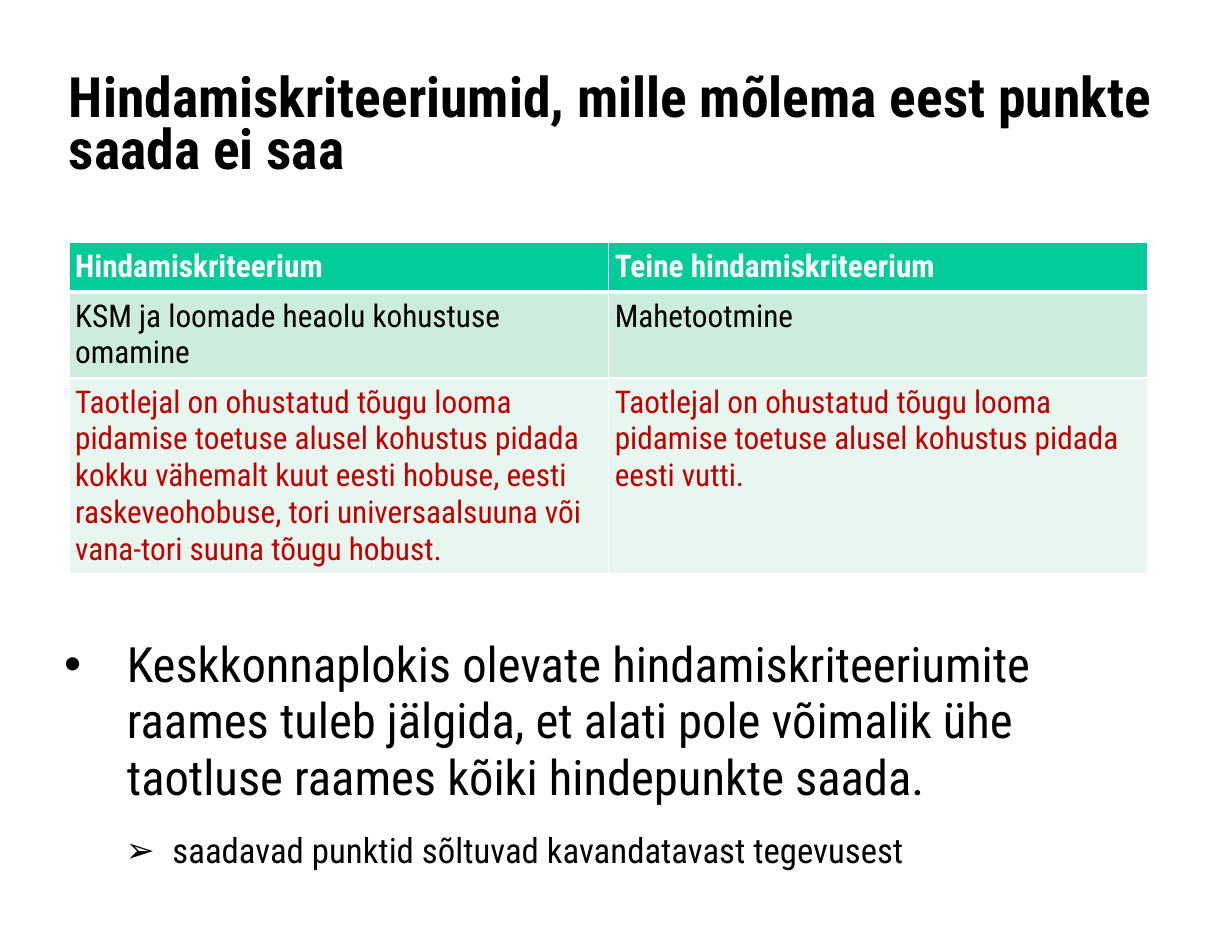
from lxml.etree import SubElement
from pptx import Presentation
from pptx.dml.color import RGBColor
from pptx.enum.text import MSO_ANCHOR, MSO_AUTO_SIZE, PP_ALIGN
from pptx.oxml.ns import qn
from pptx.util import Pt

PX = 9000  # 40 px to the centimetre
FONT = "Roboto Condensed"
BLACK = "000000"


def add_run(p, text, size, color, bold=False):
    r = p.add_run()
    r.text = text
    r.font.name = FONT
    r.font.size = Pt(size)
    r.font.bold = bold
    r.font.color.rgb = RGBColor.from_string(color)


def place(sp, left, top, width, height, anchor):
    """Move a placeholder and reset its text frame."""
    sp.left, sp.top, sp.width, sp.height = (
        v * PX for v in (left, top, width, height))
    tf = sp.text_frame
    tf.word_wrap = True
    tf.auto_size = MSO_AUTO_SIZE.NONE
    tf.vertical_anchor = anchor
    tf.margin_left = tf.margin_top = tf.margin_right = tf.margin_bottom = 0
    return tf


prs = Presentation()
prs.slide_width, prs.slide_height = 1000 * PX, 760 * PX
s = prs.slides.add_slide(prs.slide_layouts[1])

# Title
tf = place(s.shapes.title, 56, 34, 884, 140, MSO_ANCHOR.MIDDLE)
p = tf.paragraphs[0]
p.alignment = PP_ALIGN.LEFT
p.line_spacing = 0.77
add_run(p, "Hindamiskriteeriumid, mille mõlema eest punkte saada ei saa",
        32, BLACK, True)

# Criteria table: row height, fill, text colour, bold, bottom border, cell texts
rows = [
    (40, "00CC99", "FFFFFF", True, 3,
     ["Hindamiskriteerium", "Teine hindamiskriteerium"]),
    (70, "CCECDE", BLACK, False, 1,
     ["KSM ja loomade heaolu kohustuse omamine", "Mahetootmine"]),
    (159, "E7F6EF", "C00000", False, 1,
     ["Taotlejal on ohustatud tõugu looma pidamise toetuse alusel kohustus "
      "pidada kokku vähemalt kuut eesti hobuse, eesti raskeveohobuse, tori "
      "universaalsuuna või vana-tori suuna tõugu hobust.",
      "Taotlejal on ohustatud tõugu looma pidamise toetuse alusel kohustus "
      "pidada eesti vutti."]),
]
table = s.shapes.add_table(
    len(rows), 2, 56 * PX, 197 * PX, 876 * PX, 269 * PX).table
for i, (height, fill, color, bold, bottom, texts) in enumerate(rows):
    table.rows[i].height = height * PX
    top = rows[i - 1][4] if i else 1
    for j, text in enumerate(texts):
        cell = table.cell(i, j)
        cell.margin_left = cell.margin_right = 5 * PX
        cell.margin_top = cell.margin_bottom = 5 * PX
        tcPr = cell._tc.get_or_add_tcPr()
        for side, width in (("L", 1), ("R", 1), ("T", top), ("B", bottom)):
            ln = SubElement(tcPr, qn(f"a:ln{side}"), w=str(Pt(width)))
            SubElement(SubElement(ln, qn("a:solidFill")),
                       qn("a:srgbClr"), val="FFFFFF")
        cell.fill.solid()
        cell.fill.fore_color.rgb = RGBColor.from_string(fill)
        p = cell.text_frame.paragraphs[0]
        p.line_spacing = 1.0
        add_run(p, text, 18, color, bold)

# Bullets: level, indent, hanging, space after, size, bullet, text
bullets = [
    (0, 51, 51, 14, 28, "•",
     "Keskkonnaplokis olevate hindamiskriteeriumite raames tuleb jälgida, et "
     "alati pole võimalik ühe taotluse raames kõiki hindepunkte saada."),
    (1, 88, 38, 11, 20, "➢",
     "saadavad punktid sõltuvad kavandatavast tegevusest"),
]
tf = place(s.placeholders[1], 52, 516, 896, 216, MSO_ANCHOR.TOP)
tf.margin_top = PX
for i, (level, indent, hang, after, size, bullet, text) in enumerate(bullets):
    p = tf.add_paragraph() if i else tf.paragraphs[0]
    p.level = level
    p.line_spacing = 0.97
    p.space_before = Pt(0)
    p.space_after = Pt(after)
    pPr = p._p.get_or_add_pPr()
    pPr.set("marL", str(indent * PX))
    pPr.set("indent", str(-hang * PX))
    SubElement(SubElement(pPr, qn("a:buClr")), qn("a:srgbClr"), val=BLACK)
    SubElement(pPr, qn("a:buFont"), typeface="Arial")
    SubElement(pPr, qn("a:buChar"), char=bullet)
    add_run(p, text, size, BLACK)

prs.save("out.pptx")
